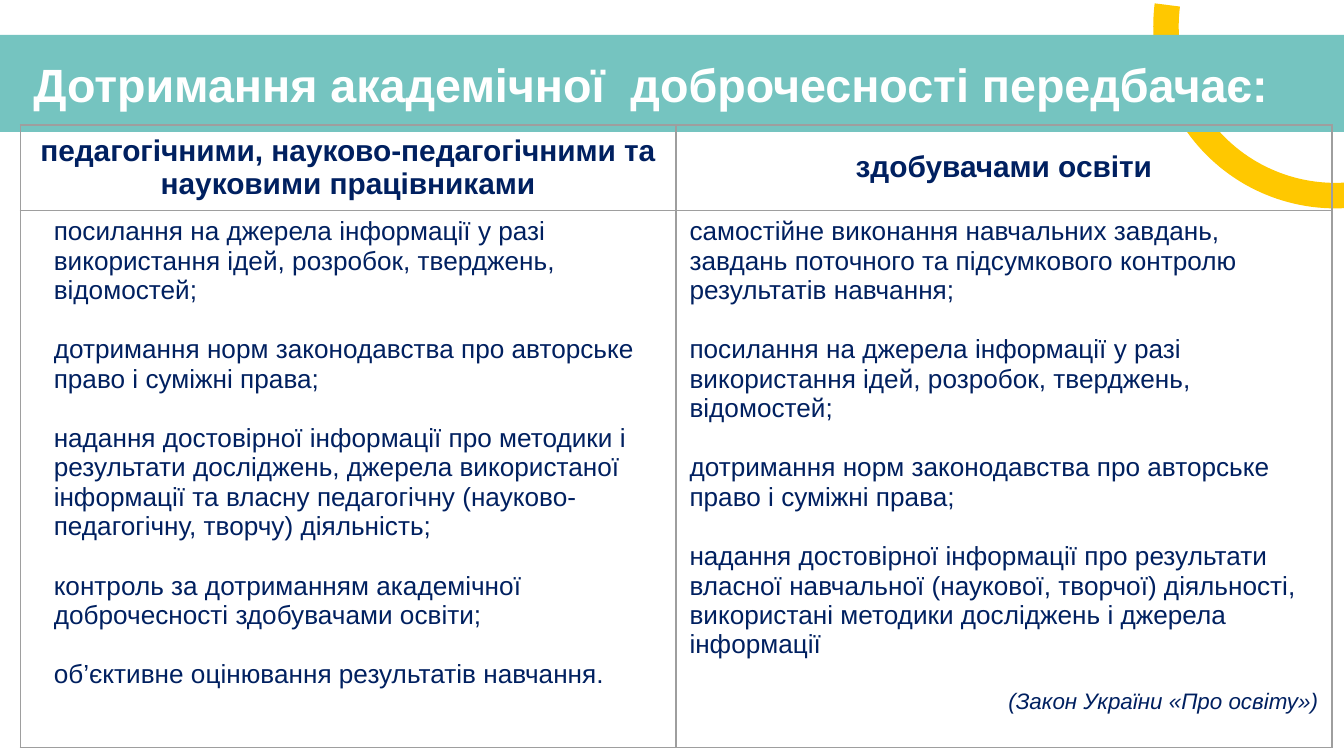
from dataclasses import dataclass

from lxml.etree import SubElement
from pptx import Presentation
from pptx.dml.color import RGBColor
from pptx.enum.shapes import MSO_SHAPE as Preset
from pptx.enum.text import MSO_ANCHOR as Anchor, PP_ALIGN as Align
from pptx.oxml.ns import qn
from pptx.util import Pt


@dataclass(frozen=True)
class Theme:
    font: str = "Arial"
    teal: str = "75C4C0"
    yellow: str = "FFC800"
    pale: str = "F2F2F2"
    white: str = "FFFFFF"
    navy: str = "002060"
    border: str = "9E9E9E"
    border_width: float = 0.75
    title_size: int = 25
    heading_size: int = 16
    body_size: int = 14
    source_size: int = 12
    item_gap: float = 16.1  # one empty line of body text


THEME = Theme()

TITLE = "Дотримання академічної  доброчесності передбачає:"
SOURCES = "посилання на джерела інформації у разі використання ідей, розробок, тверджень, відомостей;"
COPYRIGHT = "дотримання норм законодавства про авторське право і суміжні права;"
STAFF = "педагогічними, науково-педагогічними та науковими працівниками"
STAFF_DUTIES = [
    SOURCES,
    COPYRIGHT,
    "надання достовірної інформації про методики і результати досліджень, джерела використаної "
    "інформації та власну педагогічну (науково-педагогічну, творчу) діяльність;",
    "контроль за дотриманням академічної доброчесності здобувачами освіти;",
    "об’єктивне оцінювання результатів навчання.",
]
STUDENTS = "здобувачами освіти"
STUDENT_DUTIES = [
    "самостійне виконання навчальних завдань, завдань поточного та підсумкового контролю "
    "результатів навчання;",
    SOURCES,
    COPYRIGHT,
    "надання достовірної інформації про результати власної навчальної (наукової, творчої) "
    "діяльності, використані методики досліджень і джерела інформації",
]
LAW = "(Закон України «Про освіту»)"


def add_plain_shape(slide, preset, box, color):
    shape = slide.shapes.add_shape(preset, *map(Pt, box))
    shape.shadow.inherit = False
    shape.fill.solid()
    shape.fill.fore_color.rgb = RGBColor.from_string(color)
    shape.line.fill.background()
    return shape


def add_ring(slide, left, top, size, rotation, angles, thickness, color):
    ring = add_plain_shape(slide, Preset.BLOCK_ARC, (left, top, size, size), color)
    ring.rotation = rotation
    # Angles are stored in 1/60000 degree, adjustments in 1/100000
    for index, angle in enumerate(angles):
        ring.adjustments[index] = angle * 0.6
    ring.adjustments[2] = thickness


def write(paragraph, text, size, color=THEME.navy, bold=False, italic=False, align=Align.LEFT):
    paragraph.text = text
    paragraph.alignment = align
    for run in paragraph.runs:
        font = run.font
        font.name, font.size = THEME.font, Pt(size)
        font.bold, font.italic = bold, italic
        font.color.rgb = RGBColor.from_string(color)


def add_title(slide):
    title = slide.shapes.add_textbox(Pt(10.8), Pt(22.3), Pt(684.7), Pt(45.4))
    frame = title.text_frame
    frame.word_wrap = True
    frame.vertical_anchor = Anchor.MIDDLE
    write(frame.paragraphs[0], TITLE, THEME.title_size, THEME.white, bold=True)


def outline(cell):
    cell.fill.background()
    properties = cell._tc.get_or_add_tcPr()
    for position, side in enumerate(("a:lnL", "a:lnR", "a:lnT", "a:lnB")):
        line = SubElement(properties, qn(side), w=str(Pt(THEME.border_width)))
        SubElement(SubElement(line, qn("a:solidFill")), qn("a:srgbClr"), val=THEME.border)
        properties.insert(position, line)  # borders come before the fill


def fill_heading(cell, text):
    cell.vertical_anchor = Anchor.MIDDLE
    write(cell.text_frame.paragraphs[0], text, THEME.heading_size, bold=True, align=Align.CENTER)


def fill_duties(cell, duties):
    frame = cell.text_frame
    for number, duty in enumerate(duties):
        paragraph = frame.add_paragraph() if number else frame.paragraphs[0]
        write(paragraph, duty, THEME.body_size)
        if number:
            paragraph.space_before = Pt(THEME.item_gap)


def add_duties_table(slide):
    frame = slide.shapes.add_table(2, 2, Pt(10.8), Pt(67), Pt(702.8), Pt(329))
    table = frame.table
    table.first_row = table.horz_banding = False
    for row, height in zip(table.rows, (43.9, 285.1)):
        row.height = Pt(height)
    for cell in table.iter_cells():
        outline(cell)

    groups = ((STAFF, STAFF_DUTIES), (STUDENTS, STUDENT_DUTIES))
    for column, (heading, duties) in enumerate(groups):
        fill_heading(table.cell(0, column), heading)
        fill_duties(table.cell(1, column), duties)

    # Staff duties are indented; student duties end with the law cited
    table.cell(1, 0).margin_left = Pt(18)
    law = table.cell(1, 1).text_frame.add_paragraph()
    write(law, LAW, THEME.source_size, italic=True, align=Align.RIGHT)
    law.space_before = Pt(THEME.item_gap)


def main():
    deck = Presentation()
    deck.slide_width, deck.slide_height = Pt(720), Pt(405)
    slide = deck.slides.add_slide(deck.slide_layouts[6])

    # Decoration
    add_ring(slide, 617.8, -83.5, 195.1, 180, (159.04, 7.23), 0.07, THEME.yellow)
    add_plain_shape(slide, Preset.RECTANGLE, (-12.2, 18.7, 744.4, 51.9), THEME.teal)
    add_ring(slide, -117.4, 324.7, 187.9, 74.3, (125.82, 166.85), 0.1, THEME.pale)

    # Content
    add_title(slide)
    add_duties_table(slide)

    deck.save("out.pptx")


if __name__ == "__main__":
    main()
